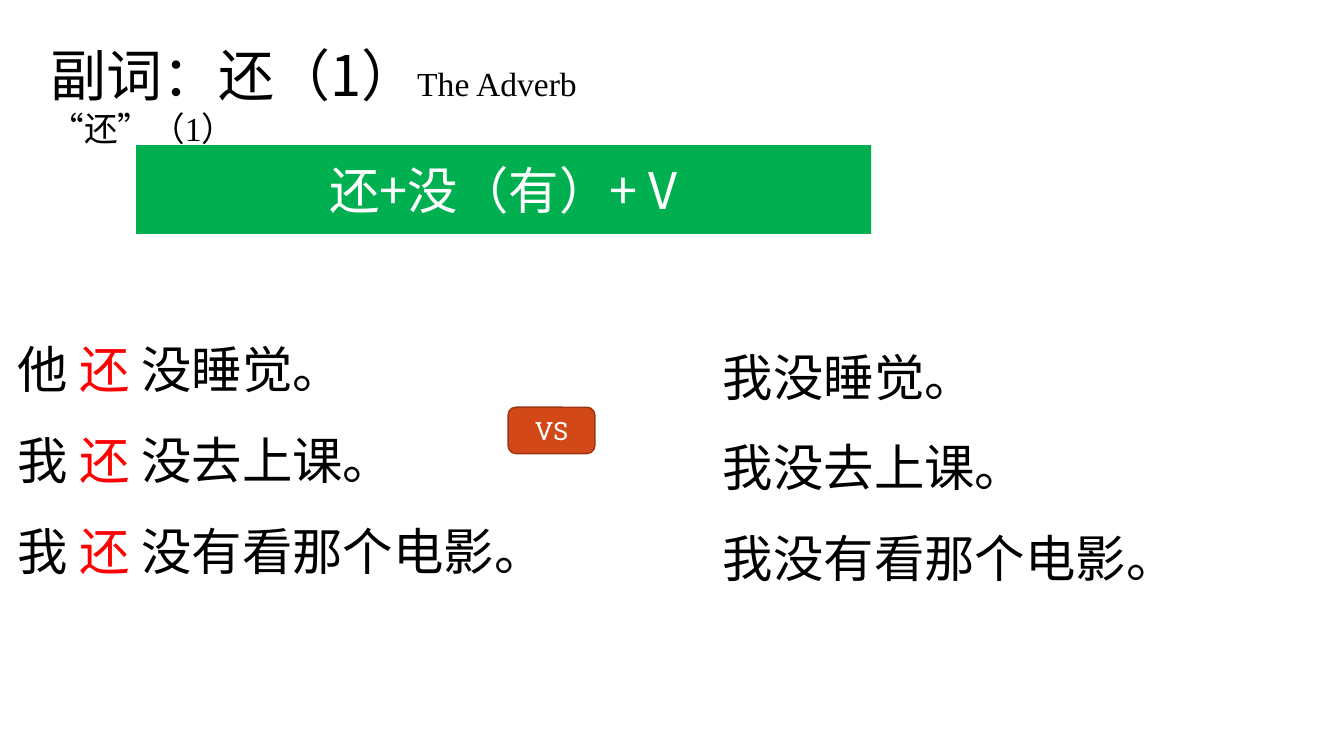
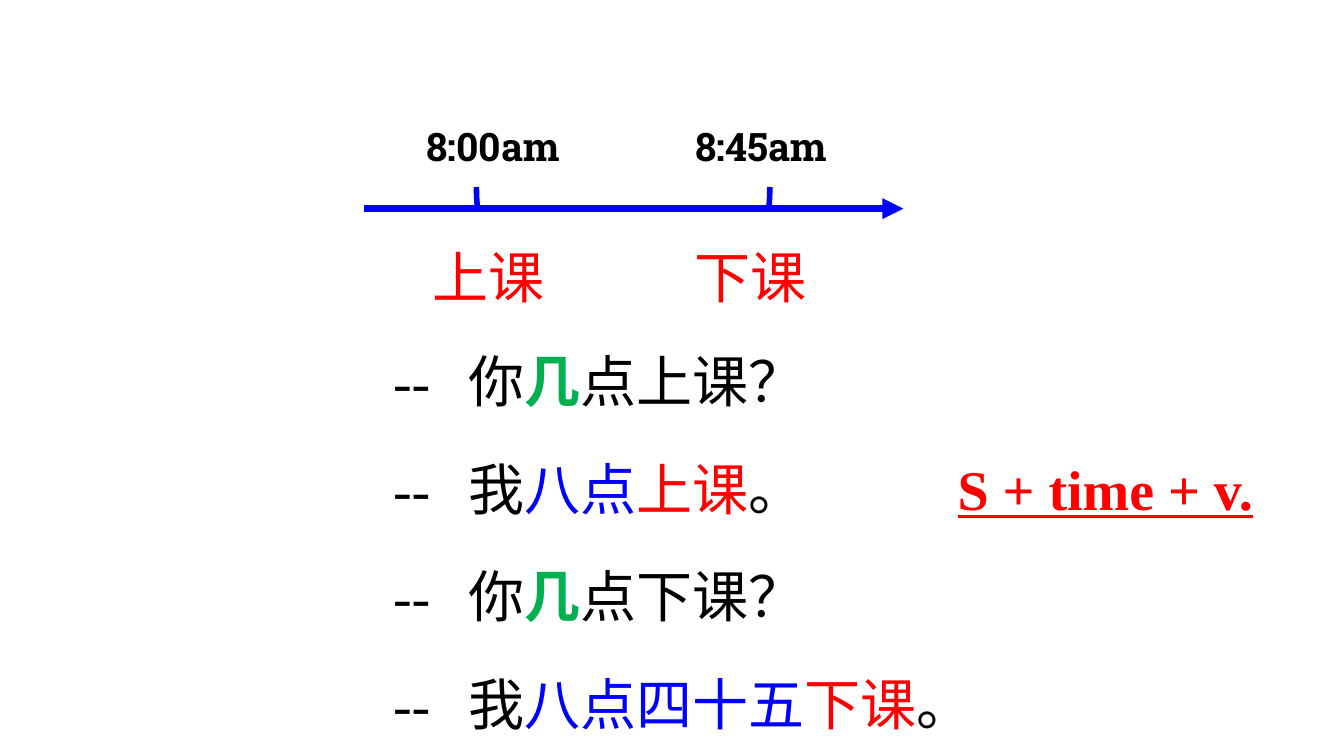
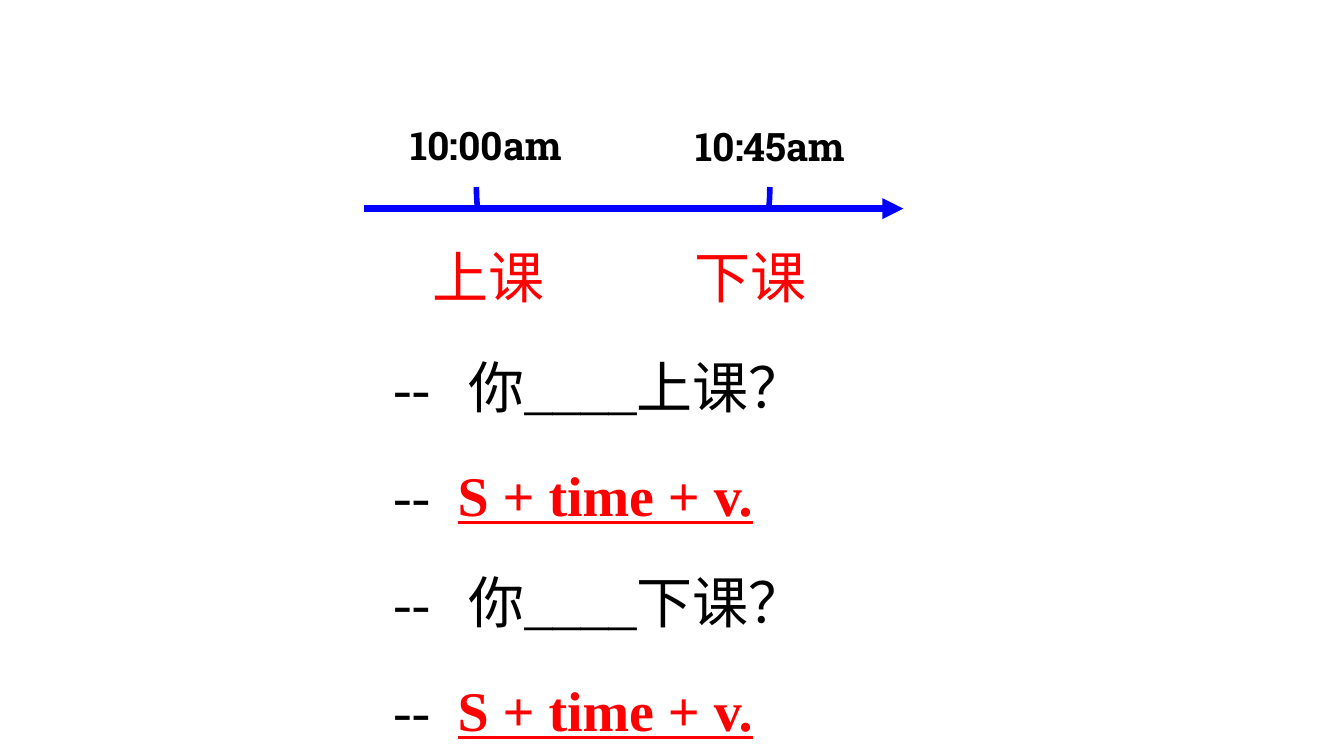
import pptx
import pptx.dml.color
import pptx.enum.shapes
import pptx.enum.text
import pptx.oxml
import pptx.oxml.ns
import pptx.util
from pptx.util import Inches

COLORS = {
    "black": "000000",
    "white": "FFFFFF",
    "red": "FF0000",
    "blue": "0000FF",
    "green": "00B050",
    "orange": "D34817",
    "rust": "9C3511",
}
CHINESE = "Noto Sans CJK SC"
SLAB = "Roboto Slab"
SERIF = "Times New Roman"

presentation = pptx.Presentation()
presentation.slide_width = Inches(13.33)
presentation.slide_height = Inches(7.5)
TITLE_ONLY, BLANK = presentation.slide_layouts[5], presentation.slide_layouts[6]
SHAPES = pptx.enum.shapes.MSO_SHAPE
ALIGN = pptx.enum.text.PP_ALIGN
ANCHOR = pptx.enum.text.MSO_ANCHOR


def color(name):
    return pptx.dml.color.RGBColor.from_string(COLORS[name])


def write(shape, lines, size, font, spacing=1.0, align=ALIGN.LEFT, anchor=ANCHOR.TOP):
    """Fill a shape with lines of (tab stops, runs); a run is (text, colour, overrides)."""
    frame = shape.text_frame
    frame.word_wrap = True
    frame.auto_size = pptx.enum.text.MSO_AUTO_SIZE.NONE
    frame.vertical_anchor = anchor
    for index, (stops, runs) in enumerate(lines):
        paragraph = frame.add_paragraph() if index else frame.paragraphs[0]
        paragraph.alignment = align
        paragraph.line_spacing = spacing
        if stops:
            properties = paragraph._p.get_or_add_pPr()
            tabs = pptx.oxml.parse_xml(f"<a:tabLst {pptx.oxml.ns.nsdecls('a')}/>")
            for stop in stops:
                tab = tabs.makeelement(pptx.oxml.ns.qn("a:tab"), {"pos": str(Inches(stop)), "algn": "l"})
                tabs.append(tab)
            properties.append(tabs)
        for text, color_name, *overrides in runs:
            style = {"size": size, "font": font, **(overrides[0] if overrides else {})}
            run = paragraph.add_run()
            run.text = text
            run.font.size = pptx.util.Pt(style["size"])
            run.font.name = style["font"]
            run.font.bold = style.get("bold", False)
            run.font.underline = style.get("underline", False)
            run.font.color.rgb = color(color_name)
            run.font._element.append(pptx.oxml.parse_xml(
                f"<a:ea {pptx.oxml.ns.nsdecls('a')} typeface='{CHINESE}'/>"))


# The adverb 还
slide = presentation.slides.add_slide(TITLE_ONLY)
title = slide.shapes.title
title.left, title.top, title.width, title.height = map(Inches, (0.4, 0.35, 6.67, 0.77))
write(title, [((), [
    ("副词：还（1）", "black"),
    ("The Adverb “还”（1）", "black", {"size": 24, "font": SERIF}),
])], 40, CHINESE)

labels = [
    (SHAPES.RECTANGLE, (1.35, 1.44, 7.29, 0.88), "green", None, "还+没（有）+ V", 36, CHINESE),
    (SHAPES.ROUNDED_RECTANGLE, (5.04, 4.04, 0.86, 0.46), "orange", "rust", "VS", 18, SLAB),
]
for kind, place, fill, outline, text, size, font in labels:
    label = slide.shapes.add_shape(kind, *map(Inches, place))
    label.shadow.inherit = False
    label.fill.solid()
    label.fill.fore_color.rgb = color(fill)
    if outline:
        label.line.color.rgb = color(outline)
        label.line.width = pptx.util.Pt(1)
    else:
        label.line.fill.background()
    write(label, [((), [(text, "white")])], size, font, align=ALIGN.CENTER, anchor=ANCHOR.MIDDLE)

with_adverb = [
    ((), [(subject, "black"), ("还", "red"), (rest, "black")])
    for subject, rest in [("他 ", " 没睡觉。"), ("我 ", " 没去上课。"), ("我 ", " 没有看那个电影。")]
]
without_adverb = [
    ((), [(sentence, "black")])
    for sentence in ("我没睡觉。", "我没去上课。", "我没有看那个电影。")
]
for place, sentences in [
    ((0.08, 3.01, 5.56, 2.97), with_adverb),
    ((7.07, 3.08, 4.85, 2.88), without_adverb),
]:
    write(slide.shapes.add_textbox(*map(Inches, place)), sentences, 36, CHINESE, spacing=1.5)

# Class times on a time line
FORMULA = ("S + time + v.", "red", {"bold": True, "underline": True})
HOW_MANY = ("几", "green", {"bold": True})
CHINESE_STOP, FORMULA_STOP, ASIDE_STOP = 0.75, 0.64, 5.6

schedules = [
    {
        "times": [("8:00am", (4.13, 1.16, 1.68, 0.57)), ("8:45am", (6.8, 1.16, 1.68, 0.57))],
        "top": 2.99,
        "dialogue": [
            ([CHINESE_STOP], [("--\t你", "black"), HOW_MANY, ("点上课？", "black")]),
            ([CHINESE_STOP, ASIDE_STOP], [("--\t我", "black"), ("八点", "blue"), ("上课", "red"),
                                          ("。\t", "black"), FORMULA]),
            ([CHINESE_STOP], [("--\t你", "black"), HOW_MANY, ("点下课？", "black")]),
            ([CHINESE_STOP], [("--\t我", "black"), ("八点四十五", "blue"), ("下课", "red"),
                              ("。", "black")]),
        ],
    },
    {
        "times": [("10:00am", (3.97, 1.15, 2.02, 0.57)), ("10:45am", (6.8, 1.16, 2.55, 0.57))],
        "top": 3.05,
        "dialogue": [
            line
            for activity in ("上课", "下课")
            for line in (
                ([CHINESE_STOP], [(f"--\t你____{activity}？", "black")]),
                ([FORMULA_STOP], [("--\t", "black"), FORMULA]),
            )
        ],
    },
]
for schedule in schedules:
    slide = presentation.slides.add_slide(BLANK)
    activities = slide.shapes.add_textbox(*map(Inches, (4.19, 1.96, 5.8, 5.11)))
    write(activities, [([2.6], [("上课\t下课", "red")])], 40, SERIF, spacing=1.6)

    bracket = slide.shapes.add_shape(SHAPES.RIGHT_BRACKET, *map(Inches, (6.07, 0.51, 0.22, 2.91)))
    bracket.rotation = 90
    bracket.shadow.inherit = False
    bracket.fill.background()
    bracket.line.color.rgb = color("blue")
    bracket.line.width = pptx.util.Pt(4)

    arrow = slide.shapes.add_connector(
        pptx.enum.shapes.MSO_CONNECTOR.STRAIGHT, *map(Inches, (3.61, 2.07, 8.96, 2.07)))
    arrow.line.color.rgb = color("blue")
    arrow.line.width = pptx.util.Pt(5)
    arrow.line._get_or_add_ln().append(pptx.oxml.parse_xml(
        f"<a:tailEnd {pptx.oxml.ns.nsdecls('a')} type='triangle'/>"))
    arrow._element.spPr.append(pptx.oxml.parse_xml(f"<a:effectLst {pptx.oxml.ns.nsdecls('a')}/>"))

    for time, place in schedule["times"]:
        write(slide.shapes.add_textbox(*map(Inches, place)),
              [((), [(time, "black", {"bold": True})])], 28, SLAB)

    dialogue = slide.shapes.add_textbox(*map(Inches, (3.8, schedule["top"], 8.94, 4.41)))
    write(dialogue, schedule["dialogue"], 40, SERIF, spacing=1.6)

presentation.save("out.pptx")
